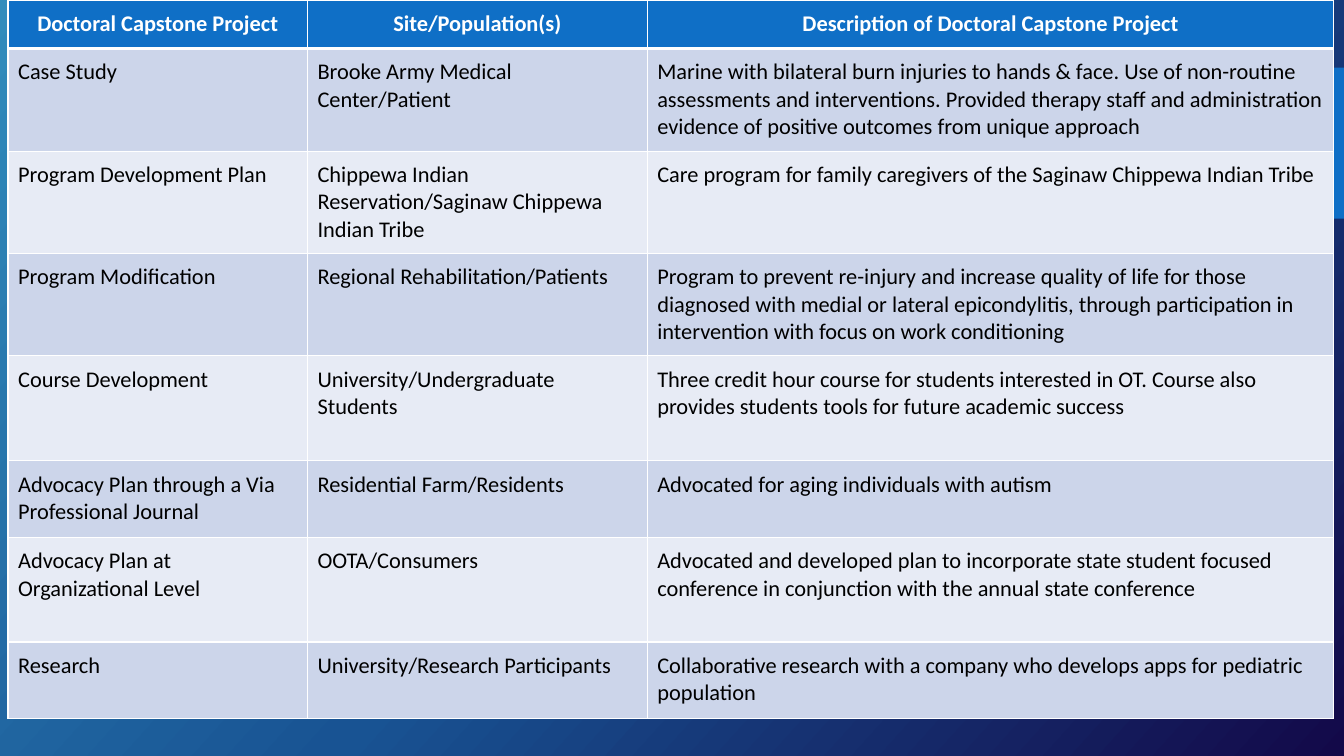
from copy import deepcopy

from lxml import etree
from pptx import Presentation
from pptx.dml.color import RGBColor
from pptx.enum.shapes import MSO_SHAPE
from pptx.enum.text import PP_ALIGN
from pptx.oxml.ns import qn
from pptx.util import Inches, Pt

RECTANGLE = MSO_SHAPE.RECTANGLE
CENTER = PP_ALIGN.CENTER
LEFT = PP_ALIGN.LEFT

SLIDE_SIZE = (13.33, 7.5)
FONT_NAME = "Calibri"
FONT_SIZE = 16
CELL_INSET = 0.1
ACCENT = "0F6FC6"
WHITE = "FFFFFF"
BLACK = "000000"
BANDS = ("CCD5EA", "E7EBF5")
BACKGROUND_STOPS = ((0, "318CBC"), (0.5, "185393"), (1, "130949"))
BACKGROUND_ANGLE = 42

TABLE_LEFT, TABLE_TOP = 0.08, 0
COLUMN_WIDTHS = (2.97, 3.37, 6.81)
ROW_HEIGHTS = (0.48, 1.02, 0.74, 1, 1.04, 0.76, 1.04, 0.76)
PROJECTS = (
    ("Doctoral Capstone Project", "Site/Population(s)",
     "Description of Doctoral Capstone Project"),
    ("Case Study", "Brooke Army Medical Center/Patient",
     "Marine with bilateral burn injuries to hands & face. Use of non-routine "
     "assessments and interventions. Provided therapy staff and administration "
     "evidence of positive outcomes from unique approach"),
    ("Program Development Plan",
     "Chippewa Indian Reservation/Saginaw Chippewa Indian Tribe",
     "Care program for family caregivers of the Saginaw Chippewa Indian Tribe"),
    ("Program Modification", "Regional Rehabilitation/Patients",
     "Program to prevent re-injury and increase quality of life for those "
     "diagnosed with medial or lateral epicondylitis, through participation in "
     "intervention with focus on work conditioning"),
    ("Course Development", "University/Undergraduate Students",
     "Three credit hour course for students interested in OT. Course also "
     "provides students tools for future academic success"),
    ("Advocacy Plan through a Via Professional Journal",
     "Residential Farm/Residents",
     "Advocated for aging individuals with autism"),
    ("Advocacy Plan at Organizational Level", "OOTA/Consumers",
     "Advocated and developed plan to incorporate state student focused "
     "conference in conjunction with the annual state conference"),
    ("Research", "University/Research Participants",
     "Collaborative research with a company who develops apps for pediatric "
     "population"),
)


def color(hex_value):
    return RGBColor.from_string(hex_value)


def set_background(slide):
    fill = slide.background.fill
    fill.gradient()
    fill.gradient_angle = 360 - BACKGROUND_ANGLE
    stop_list = slide.element.find(".//" + qn("a:gsLst"))
    stop_list.insert(1, deepcopy(stop_list[0]))
    for stop, (position, hex_value) in zip(fill.gradient_stops, BACKGROUND_STOPS):
        stop.position = position
        stop.color.rgb = color(hex_value)


def add_accent_block(slide, left, top, width, height):
    block = slide.shapes.add_shape(
        RECTANGLE, Inches(left), Inches(top), Inches(width), Inches(height))
    block.shadow.inherit = False
    block.fill.solid()
    block.fill.fore_color.rgb = color(ACCENT)
    block.line.fill.background()


def add_border(cell, side, points):
    properties = cell._tc.get_or_add_tcPr()
    line = etree.SubElement(properties, qn(f"a:ln{side}"), w=str(Pt(points)))
    line_fill = etree.SubElement(line, qn("a:solidFill"))
    etree.SubElement(line_fill, qn("a:srgbClr"), val=WHITE)


def format_cell(cell, text, row):
    header = row == 0
    thick_side = {0: "B", 1: "T"}.get(row)
    for side in "LRTB":
        add_border(cell, side, 3 if side == thick_side else 1)
    cell.fill.solid()
    cell.fill.fore_color.rgb = color(ACCENT if header else BANDS[(row - 1) % 2])
    cell.margin_left = cell.margin_right = Inches(CELL_INSET)
    cell.margin_top = cell.margin_bottom = Inches(CELL_INSET)
    cell.text = text
    paragraph = cell.text_frame.paragraphs[0]
    paragraph.alignment = CENTER if header else LEFT
    paragraph.font.name = FONT_NAME
    paragraph.font.size = Pt(FONT_SIZE)
    paragraph.font.bold = header
    paragraph.font.color.rgb = color(WHITE if header else BLACK)


def add_project_table(slide):
    table = slide.shapes.add_table(
        len(ROW_HEIGHTS), len(COLUMN_WIDTHS),
        Inches(TABLE_LEFT), Inches(TABLE_TOP),
        Inches(sum(COLUMN_WIDTHS)), Inches(sum(ROW_HEIGHTS))).table
    for column, width in zip(table.columns, COLUMN_WIDTHS):
        column.width = Inches(width)
    for row, height in zip(table.rows, ROW_HEIGHTS):
        row.height = Inches(height)
    for row_index, project in enumerate(PROJECTS):
        for column_index, text in enumerate(project):
            format_cell(table.cell(row_index, column_index), text, row_index)


def main():
    presentation = Presentation()
    presentation.slide_width, presentation.slide_height = map(Inches, SLIDE_SIZE)
    slide = presentation.slides.add_slide(presentation.slide_layouts[6])
    set_background(slide)
    add_accent_block(slide, 11.58, 0.67, 1.75, 1.5)
    add_project_table(slide)
    presentation.save("out.pptx")


if __name__ == "__main__":
    main()
